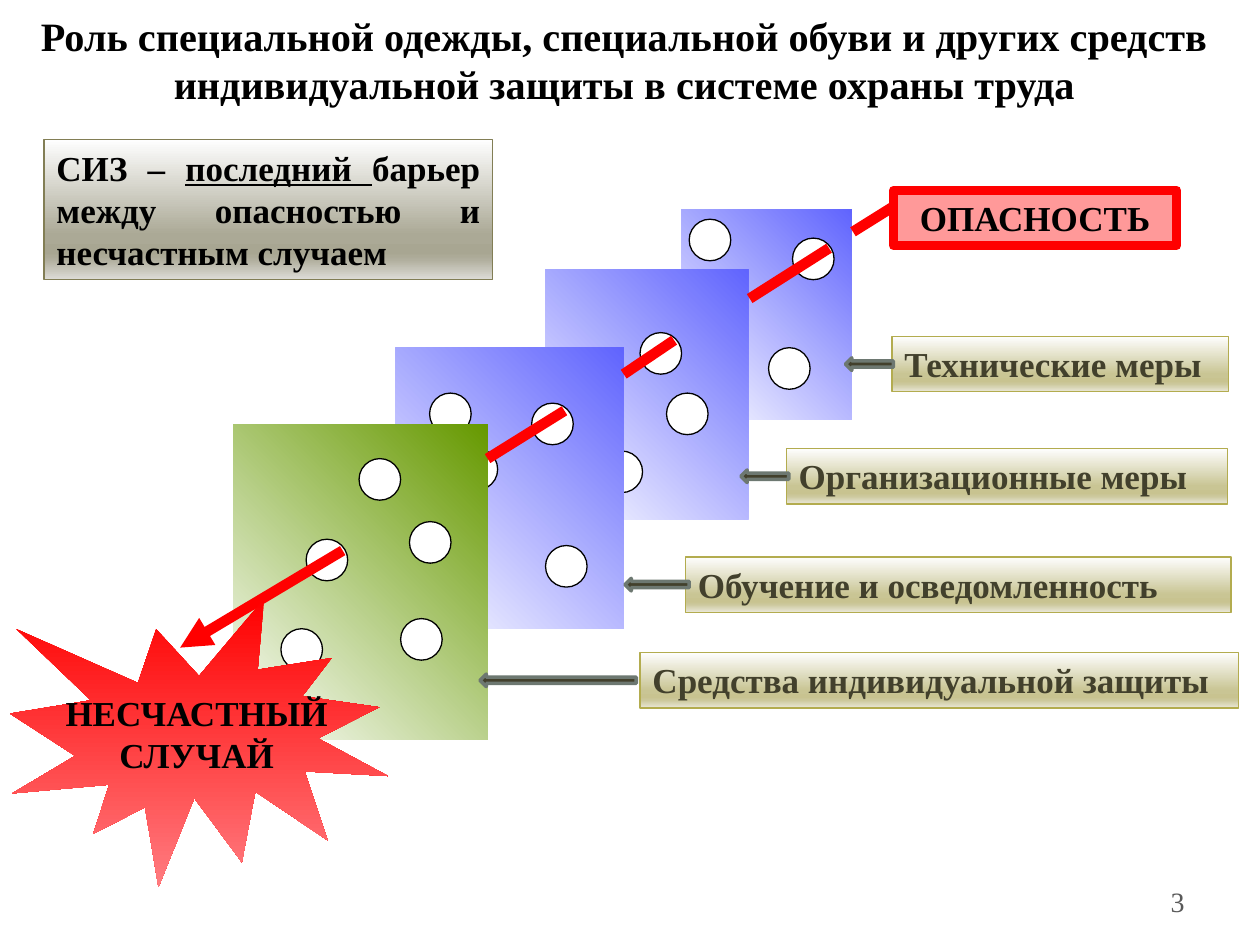
"""Build the slide on protective gear as the last barrier between danger and accident."""
from lxml.etree import SubElement
from pptx import Presentation
from pptx.dml.color import RGBColor
from pptx.enum.shapes import MSO_CONNECTOR, MSO_SHAPE
from pptx.enum.text import MSO_ANCHOR, PP_ALIGN
from pptx.oxml.ns import qn
from pptx.util import Inches, Pt

THEME = {
    "font": "Times New Roman",
    "head": 23, "body": 20, "page": 16,
    "text": "000000", "soft": "42402C", "gray": "595959",
    "hole": "FFFFFF", "red": "FF0000", "pink": "FF9999",
    "edge": "B3AC4F", "rim": "827E55", "steel": "6D7871",
    "blue": [(0, "FFFFFF"), (100, "6064FE")],
    "green": [(0, "FFFFFF"), (100, "669900")],
    "sand": [(0, "FEFEFE"), (68, "C9C594"), (81, "C8C390"), (86, "CCC89C"), (100, "E9E7D7")],
    "stone": [(0, "FEFEFE"), (68, "ABA996"), (81, "A8A692"), (86, "B1AF9E"), (100, "DEDDD8")],
    "fire": [(0, "FF0000"), (100, "FF7C80")],
}
TITLE = ("Роль специальной одежды, специальной обуви и других средств "
         "индивидуальной защиты в системе охраны труда")
CLAIM = [("СИЗ – ", False), ("последний ", True),
         ("барьер между опасностью и несчастным случаем", False)]
PANELS = [
    ((5.41, 1.66, 1.35, 1.67), "blue", [(6.1, 2.76), (6.29, 1.89), (5.47, 1.74)]),
    ((4.33, 2.14, 1.61, 1.98), "blue", [(5.08, 2.64), (4.77, 3.58), (5.29, 3.12)]),
    ((3.14, 2.76, 1.81, 2.23), "blue",
     [(3.41, 3.12), (3.62, 3.56), (3.48, 4.39), (4.33, 4.33), (4.22, 3.2)]),
    ((1.85, 3.37, 2.02, 2.5), "green",
     [(2.23, 4.99), (2.43, 4.28), (3.18, 4.91), (3.25, 4.14), (2.85, 3.64)]),
]
PATHS = [
    (7.09, 1.64, 6.77, 1.84), (6.58, 1.97, 5.95, 2.37), (5.35, 2.7, 4.95, 2.97),
    (4.48, 3.26, 3.87, 3.64), (2.72, 4.37, 1.43, 5.14),
]
LABELS = [
    ("Технические меры", 7.08, 2.67, 2.67, 6.71, 0.38),
    ("Организационные меры", 6.24, 3.56, 3.5, 5.88, 0.38),
    ("Обучение и осведомленность", 5.44, 4.42, 4.33, 4.96, 0.51),
    ("Средства индивидуальной защиты", 5.08, 5.18, 4.75, 3.81, 1.24),
]
HOLE, ROW, DART = 0.33, 0.44, 0.1


def tint(name):
    return RGBColor.from_string(THEME[name])


def blend(shape, name, angle):
    shape.fill.gradient()
    shape.fill.gradient_angle = angle
    stops = shape.element.spPr.find(qn("a:gradFill")).find(qn("a:gsLst"))
    stops.clear()
    for place, shade in THEME[name]:
        stop = SubElement(stops, qn("a:gs"), pos=str(place * 1000))
        SubElement(stop, qn("a:srgbClr"), val=shade)


def draw(slide, kind, box, fill, line=None, width=0.75, angle=270):
    shape = slide.shapes.add_shape(kind, *map(Inches, box))
    shape.shadow.inherit = False
    if isinstance(THEME[fill], list):
        blend(shape, fill, angle)
    else:
        shape.fill.solid()
        shape.fill.fore_color.rgb = tint(fill)
    if line:
        shape.line.color.rgb = tint(line)
        shape.line.width = Pt(width)
    else:
        shape.line.fill.background()
    return shape


def style(frame, align, size="body", shade="text", bold=True, anchor=MSO_ANCHOR.TOP, wrap=True):
    frame.word_wrap = wrap
    frame.vertical_anchor = anchor
    for para in frame.paragraphs:
        para.alignment = align
        for run in para.runs:
            run.font.name = THEME["font"]
            run.font.size = Pt(THEME[size])
            run.font.bold = bold
            run.font.color.rgb = tint(shade)


def write(shape, text, align, **look):
    shape.text_frame.text = text
    style(shape.text_frame, align, **look)


def trace(slide, ends, head):
    line = slide.shapes.add_connector(MSO_CONNECTOR.STRAIGHT, *map(Inches, ends))
    line.line.color.rgb = tint("red")
    line.line.width = Pt(6)
    if head:
        SubElement(line.line._get_or_add_ln(), qn("a:tailEnd"), type="triangle")
    SubElement(line.element.spPr, qn("a:effectLst"))


def main():
    deck = Presentation()
    deck.slide_width, deck.slide_height = Inches(10), Inches(7.5)
    slide = deck.slides.add_slide(deck.slide_layouts[6])

    for box, fill, holes in PANELS:
        draw(slide, MSO_SHAPE.RECTANGLE, box, fill, angle=45)
        for left, top in holes:
            draw(slide, MSO_SHAPE.OVAL, (left, top, HOLE, HOLE), "hole", "text")

    for ends in PATHS:
        trace(slide, ends, ends == PATHS[-1])

    for text, left, top, width, *_ in LABELS:
        label = draw(slide, MSO_SHAPE.RECTANGLE, (left, top, width, ROW), "sand", "edge")
        write(label, text, PP_ALIGN.LEFT, shade="soft")

    claim = draw(slide, MSO_SHAPE.RECTANGLE, (0.35, 1.11, 3.56, 1.11), "stone", "rim")
    for text, under in CLAIM:
        run = claim.text_frame.paragraphs[0].add_run()
        run.text = text
        run.font.underline = under
    style(claim.text_frame, PP_ALIGN.JUSTIFY)

    danger = draw(slide, MSO_SHAPE.RECTANGLE, (7.09, 1.51, 2.25, ROW), "pink", "red", 5)
    write(danger, "ОПАСНОСТЬ", PP_ALIGN.CENTER)

    burst = draw(slide, MSO_SHAPE.EXPLOSION1, (0.08, 4.75, 3, 2.29), "fire")
    write(burst, "НЕСЧАСТНЫЙ\nСЛУЧАЙ", PP_ALIGN.CENTER, anchor=MSO_ANCHOR.MIDDLE, wrap=False)

    for _, _, top, _, left, width in LABELS:
        mid = top + (ROW + DART) / 2 - DART
        draw(slide, MSO_SHAPE.LEFT_ARROW, (left, mid, width, DART), "soft", "steel", 2)

    page = slide.shapes.add_textbox(*map(Inches, (7.17, 6.95, 2.33, 0.4)))
    write(page, "3", PP_ALIGN.RIGHT, size="page", shade="gray", bold=False,
          anchor=MSO_ANCHOR.MIDDLE)
    title = slide.shapes.add_textbox(*map(Inches, (0, 0.04, 9.92, 0.55)))
    write(title, TITLE, PP_ALIGN.CENTER, size="head")

    deck.save("out.pptx")


if __name__ == "__main__":
    main()
